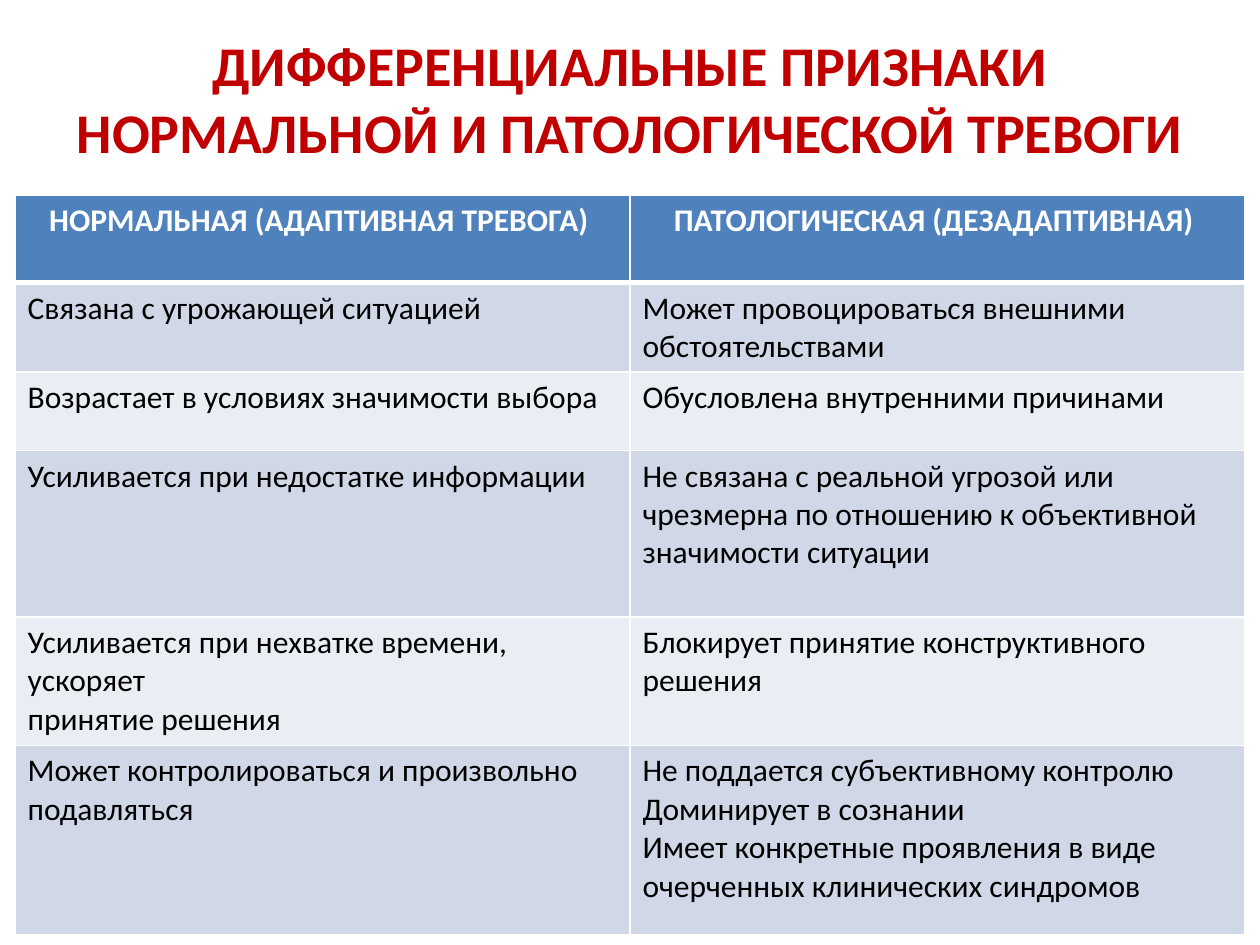
from dataclasses import dataclass
import lxml.etree
import pptx
import pptx.dml.color
import pptx.enum.text
import pptx.oxml.ns
import pptx.util

Pt = pptx.util.Pt
Align = pptx.enum.text.PP_ALIGN
Anchor = pptx.enum.text.MSO_ANCHOR
qn = pptx.oxml.ns.qn

FONT = "Calibri"
COLORS = {
    "title": "C00000",
    "head": "4F81BD",
    "odd": "D0D8E8",
    "even": "E9EDF4",
    "line": "FFFFFF",
    "light": "FFFFFF",
    "dark": "000000",
}


@dataclass
class Style:
    size: float
    color: str
    bold: bool = False
    align: Align = Align.LEFT


@dataclass
class Row:
    height: float
    normal: list[str]
    morbid: list[str]


TITLE = Style(32, "title", True, Align.CENTER)
HEAD = Style(18, "light", True, Align.CENTER)
BODY = Style(18, "dark")

ROWS = [
    Row(50, ["НОРМАЛЬНАЯ (АДАПТИВНАЯ ТРЕВОГА) "], ["ПАТОЛОГИЧЕСКАЯ (ДЕЗАДАПТИВНАЯ) "]),
    Row(51, ["Связана с угрожающей ситуацией"],
        ["Может провоцироваться внешними обстоятельствами"]),
    Row(45, ["Возрастает в условиях значимости выбора"],
        ["Обусловлена внутренними причинами"]),
    Row(95, ["Усиливается при недостатке информации"],
        ["Не связана с реальной угрозой или чрезмерна по отношению "
         "к объективной значимости ситуации"]),
    Row(73.5, ["Усиливается при нехватке времени, ускоряет", "принятие решения"],
        ["Блокирует принятие конструктивного решения"]),
    Row(108, ["Может контролироваться и произвольно", "подавляться"],
        ["Не поддается субъективному контролю", "Доминирует в сознании",
         "Имеет конкретные проявления в виде очерченных клинических синдромов"]),
]


def rgb(name: str) -> pptx.dml.color.RGBColor:
    return pptx.dml.color.RGBColor.from_string(COLORS[name])


def write(frame, lines: list[str], style: Style) -> None:
    frame.word_wrap = True
    for i, line in enumerate(lines):
        para = frame.add_paragraph() if i else frame.paragraphs[0]
        para.alignment = style.align
        run = para.add_run()
        run.text = line
        run.font.name = FONT
        run.font.size = Pt(style.size)
        run.font.bold = style.bold
        run.font.color.rgb = rgb(style.color)


def border(cell, widths: dict[str, float]) -> None:
    props = cell._tc.get_or_add_tcPr()
    for i, (side, width) in enumerate(widths.items()):
        line = lxml.etree.Element(qn(f"a:ln{side}"), w=str(Pt(width)))
        fill = lxml.etree.SubElement(line, qn("a:solidFill"))
        lxml.etree.SubElement(fill, qn("a:srgbClr"), val=COLORS["line"])
        props.insert(i, line)


def draw_title(slide) -> None:
    box = slide.shapes.add_textbox(Pt(8.64), Pt(0), Pt(702.72), Pt(111.6))
    box.text_frame.vertical_anchor = Anchor.MIDDLE
    write(box.text_frame,
          ["ДИФФЕРЕНЦИАЛЬНЫЕ ПРИЗНАКИ НОРМАЛЬНОЙ И ПАТОЛОГИЧЕСКОЙ ТРЕВОГИ"], TITLE)


def draw_table(slide, rows: list[Row]) -> None:
    height = sum(row.height for row in rows)
    table = slide.shapes.add_table(
        len(rows), 2, Pt(8.64), Pt(111.6), Pt(702.72), Pt(height)).table
    for i, row in enumerate(rows):
        table.rows[i].height = Pt(row.height)
        shade = "head" if i == 0 else "odd" if i % 2 else "even"
        top = 3 if i == 1 else 1
        base = 3 if i == 0 else 1
        for j, lines in enumerate((row.normal, row.morbid)):
            cell = table.cell(i, j)
            cell.fill.solid()
            cell.fill.fore_color.rgb = rgb(shade)
            border(cell, {"L": 1, "R": 1, "T": top, "B": base})
            write(cell.text_frame, lines, BODY if i else HEAD)


def main() -> None:
    deck = pptx.Presentation()
    deck.slide_width = Pt(720)
    deck.slide_height = Pt(540)
    slide = deck.slides.add_slide(deck.slide_layouts[6])
    draw_title(slide)
    draw_table(slide, ROWS)
    deck.save("out.pptx")


if __name__ == "__main__":
    main()
